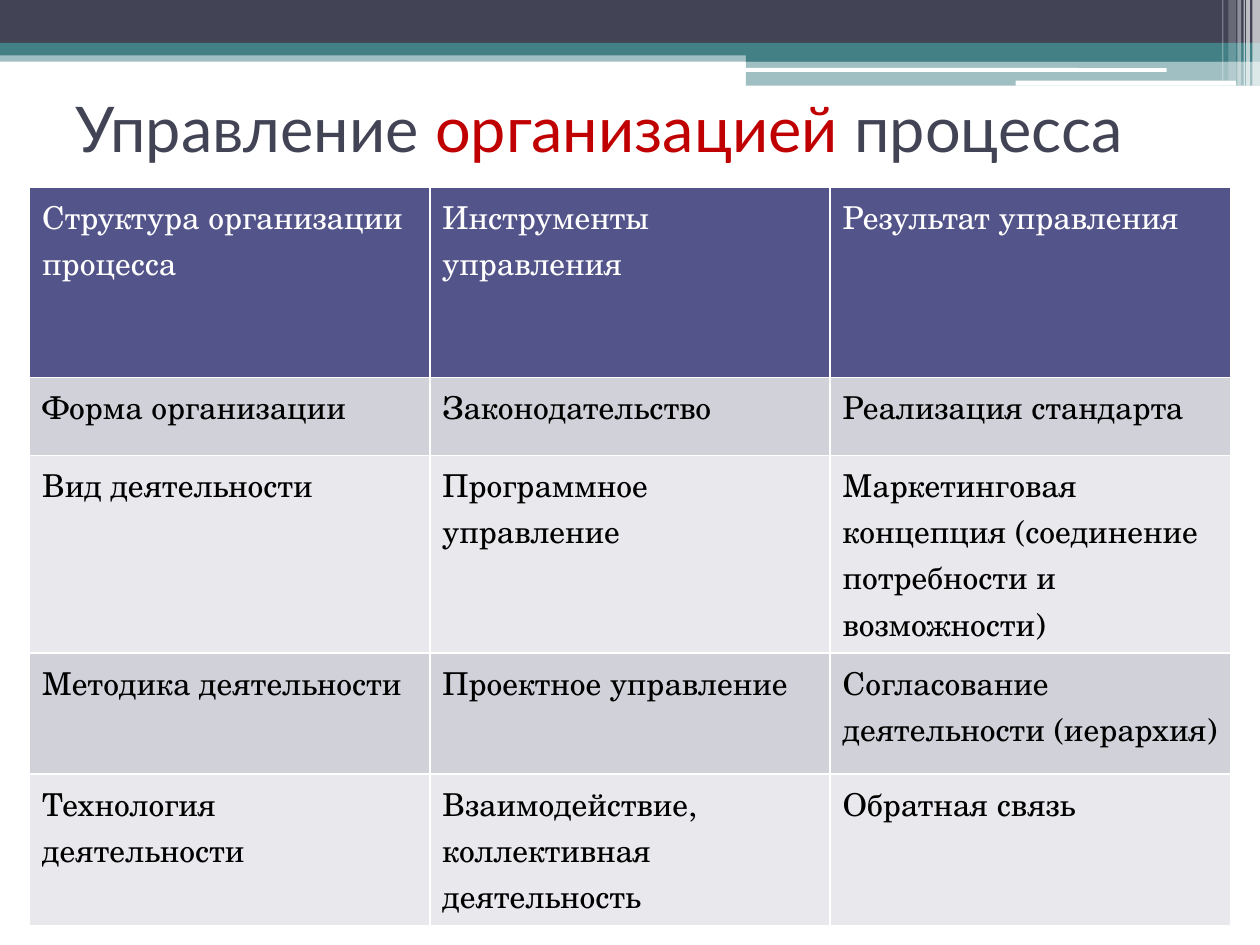
from lxml import etree
from pptx import Presentation
from pptx import util as u
from pptx.dml.color import RGBColor
from pptx.enum import shapes, text
from pptx.oxml.ns import qn

COLUMNS, ROWS = 100, 75
SLATE, TEAL, WHITE, RED, BLACK = "424456", "438086", "FFFFFF", "C00000", "000000"
HEADER, DARK_BAND, LIGHT_BAND = "53548A", "D1D1DA", "E9E9ED"


def color(value):
    return RGBColor.from_string(value)


def write(paragraph, content, font, size, ink):
    run = paragraph.add_run()
    run.text = content
    run.font.name = font
    run.font.size = u.Pt(size)
    run.font.color.rgb = color(ink)


class Deck:
    title_font, body_font = "Lato", "TeX Gyre Schola"
    title_size, body_size = 36, 18

    def __init__(self):
        self.presentation = Presentation()
        self.presentation.slide_width = u.Inches(10)
        self.presentation.slide_height = u.Inches(7.5)
        self.slide = self.presentation.slides.add_slide(self.presentation.slide_layouts[6])

    def across(self, columns):
        return round(self.presentation.slide_width * columns / COLUMNS)

    def down(self, rows):
        return round(self.presentation.slide_height * rows / ROWS)

    def place(self, left, top, width, height):
        return self.across(left), self.down(top), self.across(width), self.down(height)

    def bar(self, area, fill, opacity=100, rounded=False):
        kind = shapes.MSO_SHAPE.ROUNDED_RECTANGLE if rounded else shapes.MSO_SHAPE.RECTANGLE
        bar = self.slide.shapes.add_shape(kind, *self.place(*area))
        bar.shadow.inherit = False
        bar.line.fill.background()
        bar.fill.solid()
        bar.fill.fore_color.rgb = color(fill)
        if opacity < 100:
            tint = bar.fill._xPr.find(".//" + qn("a:srgbClr"))
            etree.SubElement(tint, qn("a:alpha"), val=str(opacity * 1000))

    def title(self, area, parts):
        frame = self.slide.shapes.add_textbox(*self.place(*area)).text_frame
        frame.word_wrap = True
        frame.vertical_anchor = text.MSO_ANCHOR.MIDDLE
        for content, ink in parts:
            write(frame.paragraphs[0], content, font=self.title_font, size=self.title_size, ink=ink)

    def border(self, cell, side):
        line = etree.SubElement(cell._tc.get_or_add_tcPr(), qn("a:" + side), w=str(u.Pt(1)))
        fill = etree.SubElement(line, qn("a:solidFill"))
        etree.SubElement(fill, qn("a:srgbClr"), val=WHITE)

    def table(self, left, top, width, heights, entries):
        area = self.place(left, top, width, sum(heights))
        grid = self.slide.shapes.add_table(len(entries), len(entries[0]), *area).table
        for r, (height, entry) in enumerate(zip(heights, entries)):
            grid.rows[r].height = self.down(height)
            band = HEADER if r == 0 else DARK_BAND if r % 2 else LIGHT_BAND
            for c, content in enumerate(entry):
                cell = grid.cell(r, c)
                for side in ("lnL", "lnR", "lnT", "lnB"):
                    self.border(cell, side)
                cell.fill.solid()
                cell.fill.fore_color.rgb = color(band)
                write(cell.text_frame.paragraphs[0], content, font=self.body_font,
                      size=self.body_size, ink=BLACK if r else WHITE)


def main():
    deck = Deck()
    deck.bar((0, 4, 100, 0.9), TEAL, opacity=50)
    deck.bar((0, 0, 100, 3.4), SLATE)
    deck.bar((0, 3.4, 100, 1), TEAL)
    deck.bar((59.2, 3.9, 40.8, 1), TEAL)
    deck.bar((59.2, 4.8, 40.8, 2), TEAL, opacity=50)
    deck.bar((59.1, 5.4, 33.5, 0.3), WHITE, rounded=True)
    deck.bar((80.6, 6.4, 17.5, 0.4), WHITE, rounded=True)
    for left, width, height, opacity in (
        (99.4, 0.6, 6.8, 65), (98.9, 0.3, 6.8, 65), (98.7, 0.1, 6.8, 60),
        (98.2, 0.3, 6.8, 40), (97.5, 0.6, 6.4, 20), (97, 0.1, 6.4, 30),
    ):
        deck.bar((left, 0, width, height), WHITE, opacity=opacity)

    deck.title((5, 6.2, 90, 7.8),
               [("Управление ", SLATE), ("организацией", RED), (" процесса", SLATE)])
    deck.table(2.35, 14.85, 95.3, (15.1, 6.2, 15.7, 9.6, 12), [
        ("Структура организации процесса", "Инструменты управления", "Результат управления"),
        ("Форма организации", "Законодательство", "Реализация стандарта"),
        ("Вид деятельности", "Программное управление",
         "Маркетинговая концепция (соединение потребности и возможности)"),
        ("Методика деятельности", "Проектное управление", "Согласование деятельности (иерархия)"),
        ("Технология деятельности", "Взаимодействие, коллективная деятельность", "Обратная связь"),
    ])
    deck.presentation.save("out.pptx")


if __name__ == "__main__":
    main()
